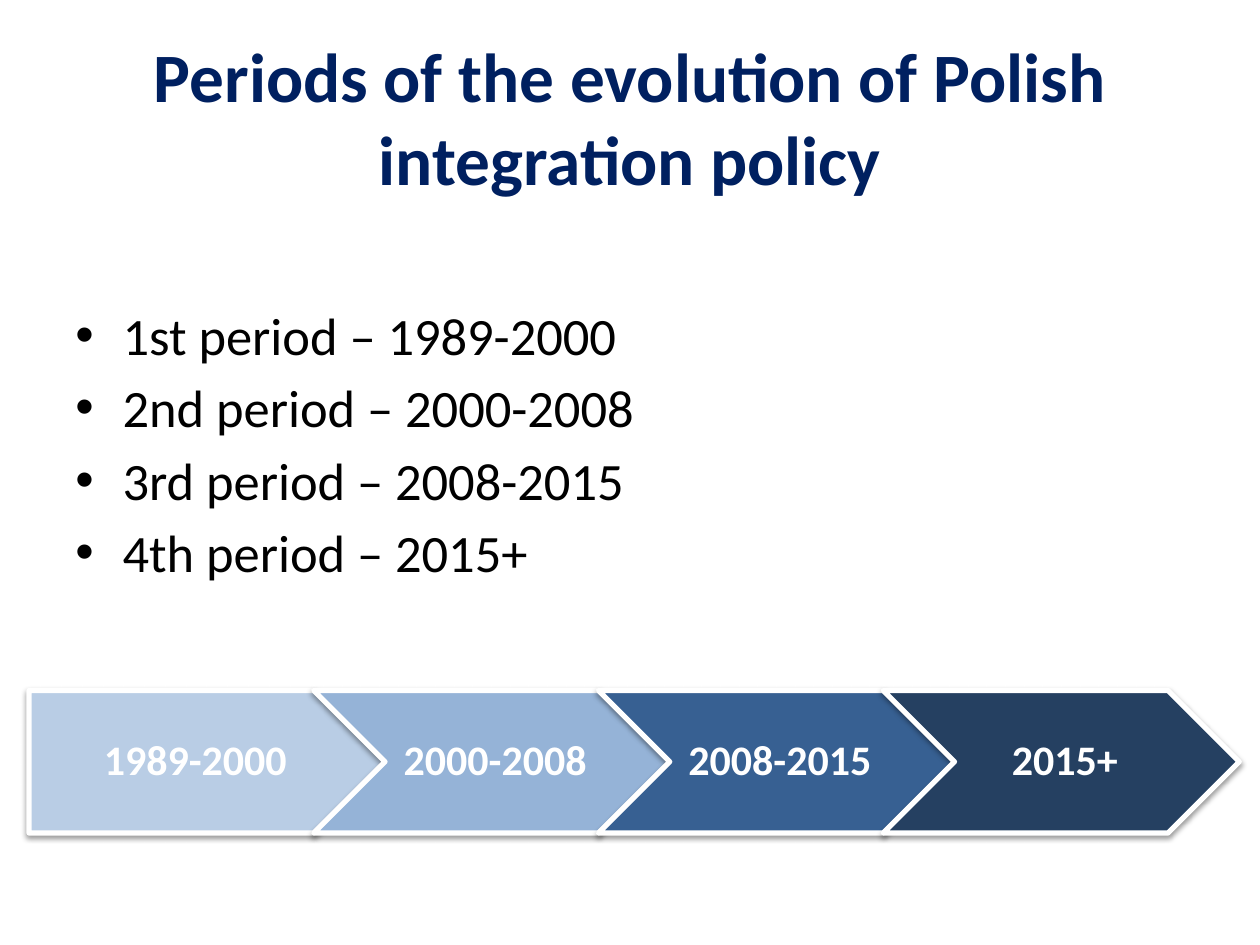
from lxml import etree
from pptx import Presentation
from pptx.dml.color import RGBColor
from pptx.enum.shapes import MSO_SHAPE
from pptx.enum.text import MSO_ANCHOR, MSO_AUTO_SIZE, PP_ALIGN
from pptx.oxml import parse_xml
from pptx.oxml.ns import nsdecls, qn
from pptx.util import Pt

PENTAGON, CHEVRON = MSO_SHAPE.PENTAGON, MSO_SHAPE.CHEVRON
MIDDLE, TOP = MSO_ANCHOR.MIDDLE, MSO_ANCHOR.TOP
CENTER, LEFT = PP_ALIGN.CENTER, PP_ALIGN.LEFT
NO_AUTOFIT = MSO_AUTO_SIZE.NONE

NAVY = RGBColor(0x00, 0x20, 0x60)
BLACK = RGBColor(0x00, 0x00, 0x00)
WHITE = RGBColor(0xFF, 0xFF, 0xFF)
PALE_BLUE = RGBColor(0xB9, 0xCD, 0xE5)
LIGHT_BLUE = RGBColor(0x95, 0xB3, 0xD7)
MID_BLUE = RGBColor(0x37, 0x60, 0x92)
DARK_BLUE = RGBColor(0x25, 0x40, 0x61)

FONT = "Calibri"
TITLE = "Periods of the evolution of Polish integration policy"
PERIODS = [
    ("1st", "1989-2000", PALE_BLUE),
    ("2nd", "2000-2008", LIGHT_BLUE),
    ("3rd", "2008-2015", MID_BLUE),
    ("4th", "2015+", DARK_BLUE),
]

# Timeline geometry in points; each step overlaps the next by a fifth
TIMELINE_LEFT, TIMELINE_TOP = 16.6, 394.6
STEP_WIDTH, STEP_HEIGHT = 203.4, 81.4
STEP_PITCH = STEP_WIDTH * 0.8


def write_text(frame, lines, *, size, color, bold=False, align=LEFT,
               anchor=TOP, line_spacing=1.0, gap=0, bullet_indent=0):
    """Fill a text frame with one paragraph per line."""
    frame.word_wrap = True
    frame.auto_size = NO_AUTOFIT
    frame.vertical_anchor = anchor
    for index, line in enumerate(lines):
        paragraph = frame.add_paragraph() if index else frame.paragraphs[0]
        paragraph.alignment = align
        paragraph.line_spacing = line_spacing
        paragraph.space_after = Pt(gap)
        run = paragraph.add_run()
        run.text = line
        run.font.name = FONT
        run.font.size = Pt(size)
        run.font.bold = bold
        run.font.color.rgb = color
        if bullet_indent:
            add_bullet(paragraph, bullet_indent)


def add_bullet(paragraph, indent):
    properties = paragraph._p.get_or_add_pPr()
    properties.set("marL", str(Pt(indent)))
    properties.set("indent", str(-Pt(indent)))
    etree.SubElement(properties, qn("a:buFont")).set("typeface", "Arial")
    etree.SubElement(properties, qn("a:buChar")).set("char", "•")


def add_soft_shadow(shape):
    shape._element.spPr.append(parse_xml(
        f'<a:effectLst {nsdecls("a")}>'
        f'<a:outerShdw blurRad="{Pt(3.1)}" dist="{Pt(1.6)}" dir="5400000" rotWithShape="0">'
        '<a:srgbClr val="000000"><a:alpha val="38000"/></a:srgbClr>'
        '</a:outerShdw></a:effectLst>'))


def add_title(slide):
    title = slide.shapes.title
    title.left, title.top, title.width, title.height = Pt(36), Pt(21.6), Pt(648), Pt(90)
    write_text(title.text_frame, [TITLE], size=39.6, color=NAVY, bold=True,
               align=CENTER, anchor=MIDDLE)


def add_period_list(slide):
    period_list = slide.shapes.add_textbox(Pt(36), Pt(169.5), Pt(648), Pt(180))
    lines = [f"{ordinal} period – {years}" for ordinal, years, _ in PERIODS]
    write_text(period_list.text_frame, lines, size=30, color=BLACK,
               gap=5.4, bullet_indent=27)


def add_timeline_step(slide, index, years, fill):
    step = slide.shapes.add_shape(
        CHEVRON if index else PENTAGON,
        Pt(TIMELINE_LEFT + index * STEP_PITCH), Pt(TIMELINE_TOP),
        Pt(STEP_WIDTH), Pt(STEP_HEIGHT))
    step.fill.solid()
    step.fill.fore_color.rgb = fill
    step.line.color.rgb = WHITE
    step.line.width = Pt(3)
    add_soft_shadow(step)
    frame = step.text_frame
    frame.margin_left = Pt(7 if index else 10)
    frame.margin_right = Pt(3)
    frame.margin_top = frame.margin_bottom = Pt(5)
    write_text(frame, [years], size=24, color=WHITE, bold=True,
               align=CENTER, anchor=MIDDLE, line_spacing=0.9)


def main():
    presentation = Presentation()
    presentation.slide_width, presentation.slide_height = Pt(720), Pt(540)
    slide = presentation.slides.add_slide(presentation.slide_layouts[5])

    # Heading and list of periods
    add_title(slide)
    add_period_list(slide)

    # Timeline, from pale to dark
    for index, (_, years, fill) in enumerate(PERIODS):
        add_timeline_step(slide, index, years, fill)

    presentation.save("out.pptx")


if __name__ == "__main__":
    main()
